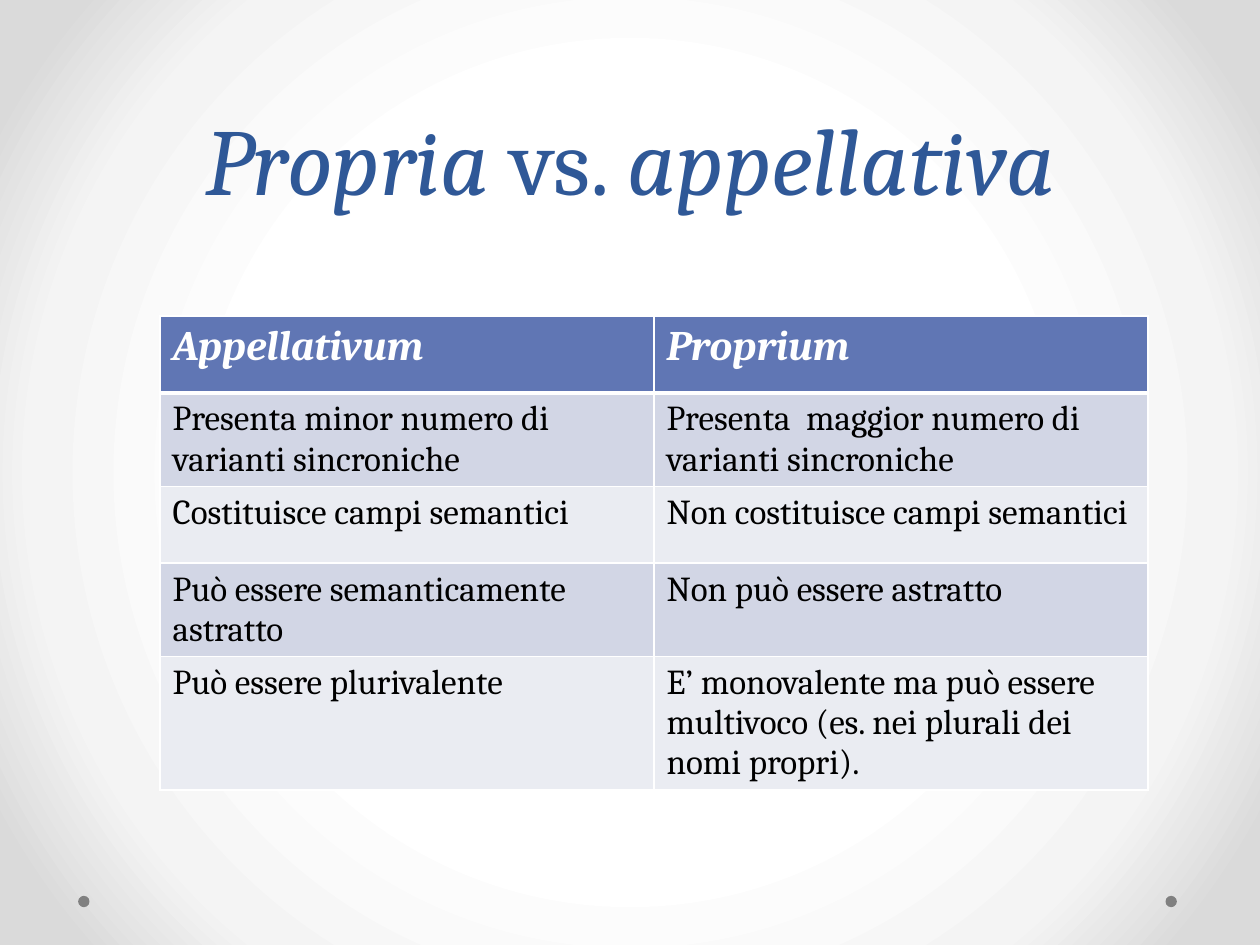
from lxml import etree
from pptx import Presentation
from pptx.dml.color import RGBColor
from pptx.enum.shapes import MSO_SHAPE
from pptx.enum.text import MSO_ANCHOR, PP_ALIGN
from pptx.oxml.ns import qn
from pptx.util import Inches, Pt

OVAL = MSO_SHAPE.OVAL
BOTTOM = MSO_ANCHOR.BOTTOM
CENTER = PP_ALIGN.CENTER
TITLE_ONLY = 5

WIDTH, HEIGHT = 10, 7.5
FONT = "Cambria"
TITLE = [("Propria", True), (" vs. ", False), ("appellativa", True)]
TITLE_BOX = (0.5, 0, 9, 1.75)
ROWS = [
    ("Appellativum", "Proprium"),
    ("Presenta minor numero di varianti sincroniche",
     "Presenta  maggior numero di varianti sincroniche"),
    ("Costituisce campi semantici", "Non costituisce campi semantici"),
    ("Può essere semanticamente astratto", "Non può essere astratto"),
    ("Può essere plurivalente",
     "E’ monovalente ma può essere multivoco (es. nei plurali dei nomi propri)."),
]
ROW_HEIGHTS = [0.61, 0.63, 0.61, 0.61, 0.61]
TABLE_LEFT, TABLE_TOP, COLUMN_WIDTH = 1.27, 2.51, 3.92
HEADER_FILL, BAND_FILLS = "6076B4", ("EAECF2", "D2D6E5")
TITLE_FORMAT = {"size": Pt(54), "bold": False}
HEADER_FORMAT = {"size": Pt(24), "bold": True, "italic": True}
BODY_FORMAT = {"size": Pt(20), "bold": False, "italic": False}
GRADIENT = [(50, "FFFFFF"), (76, "F4F4F4"), (92, "DADADA")]
DOT_LEFTS, DOT_TOP, DOT_SIZE = (0.62, 9.25), 7.11, 0.09


def rgb(color):
    return RGBColor.from_string(color)


def add_run(paragraph, text, color, settings):
    run = paragraph.add_run()
    run.text = text
    run.font.name = FONT
    run.font.color.rgb = rgb(color)
    for name, value in settings.items():
        setattr(run.font, name, value)


def add_color(parent, color):
    return etree.SubElement(parent, qn("a:srgbClr"), val=color)


def paint_background(slide):
    slide.background.fill.gradient()
    gradient = slide.element.find(".//" + qn("a:gradFill"))
    for child in list(gradient):
        gradient.remove(child)
    stops = etree.SubElement(gradient, qn("a:gsLst"))
    for position, color in GRADIENT:
        add_color(etree.SubElement(stops, qn("a:gs"), pos=str(position * 1000)), color)
    circle = etree.SubElement(gradient, qn("a:path"), path="circle")
    etree.SubElement(circle, qn("a:fillToRect"), l="50000", t="50000", r="50000", b="50000")


def add_dots(slide):
    for left in DOT_LEFTS:
        dot = slide.shapes.add_shape(
            OVAL, *map(Inches, (left, DOT_TOP, DOT_SIZE, DOT_SIZE)))
        dot.shadow.inherit = False
        dot.fill.solid()
        dot.fill.fore_color.rgb = rgb("808080")
        dot.line.fill.background()


def fill_title(slide):
    title = slide.shapes.title
    title.left, title.top, title.width, title.height = map(Inches, TITLE_BOX)
    title.text_frame.vertical_anchor = BOTTOM
    title.text_frame.word_wrap = True
    paragraph = title.text_frame.paragraphs[0]
    paragraph.alignment = CENTER
    paragraph.line_spacing = Pt(58)
    for text, italic in TITLE:
        add_run(paragraph, text, "2F5897", TITLE_FORMAT | {"italic": italic})


def set_borders(cell, row):
    widths = {"L": 1, "R": 1, "T": 3 if row == 1 else 1, "B": 3 if row == 0 else 1}
    properties = cell._tc.get_or_add_tcPr()
    for side, width in widths.items():
        line = etree.SubElement(properties, qn("a:ln" + side), w=str(Pt(width)))
        add_color(etree.SubElement(line, qn("a:solidFill")), "FFFFFF")


def add_comparison(slide):
    columns = len(ROWS[0])
    table = slide.shapes.add_table(
        len(ROWS), columns, Inches(TABLE_LEFT), Inches(TABLE_TOP),
        Inches(COLUMN_WIDTH * columns), Inches(sum(ROW_HEIGHTS))).table
    for column in table.columns:
        column.width = Inches(COLUMN_WIDTH)
    for row, texts in enumerate(ROWS):
        table.rows[row].height = Inches(ROW_HEIGHTS[row])
        fill = BAND_FILLS[row % 2] if row else HEADER_FILL
        color, settings = ("000000", BODY_FORMAT) if row else ("FFFFFF", HEADER_FORMAT)
        for column, text in enumerate(texts):
            cell = table.cell(row, column)
            set_borders(cell, row)
            cell.fill.solid()
            cell.fill.fore_color.rgb = rgb(fill)
            add_run(cell.text_frame.paragraphs[0], text, color, settings)


def main():
    """Build the slide comparing proper names with common nouns."""
    presentation = Presentation()
    presentation.slide_width, presentation.slide_height = Inches(WIDTH), Inches(HEIGHT)
    slide = presentation.slides.add_slide(presentation.slide_layouts[TITLE_ONLY])
    paint_background(slide)
    add_dots(slide)
    fill_title(slide)
    add_comparison(slide)
    presentation.save("out.pptx")


if __name__ == "__main__":
    main()
